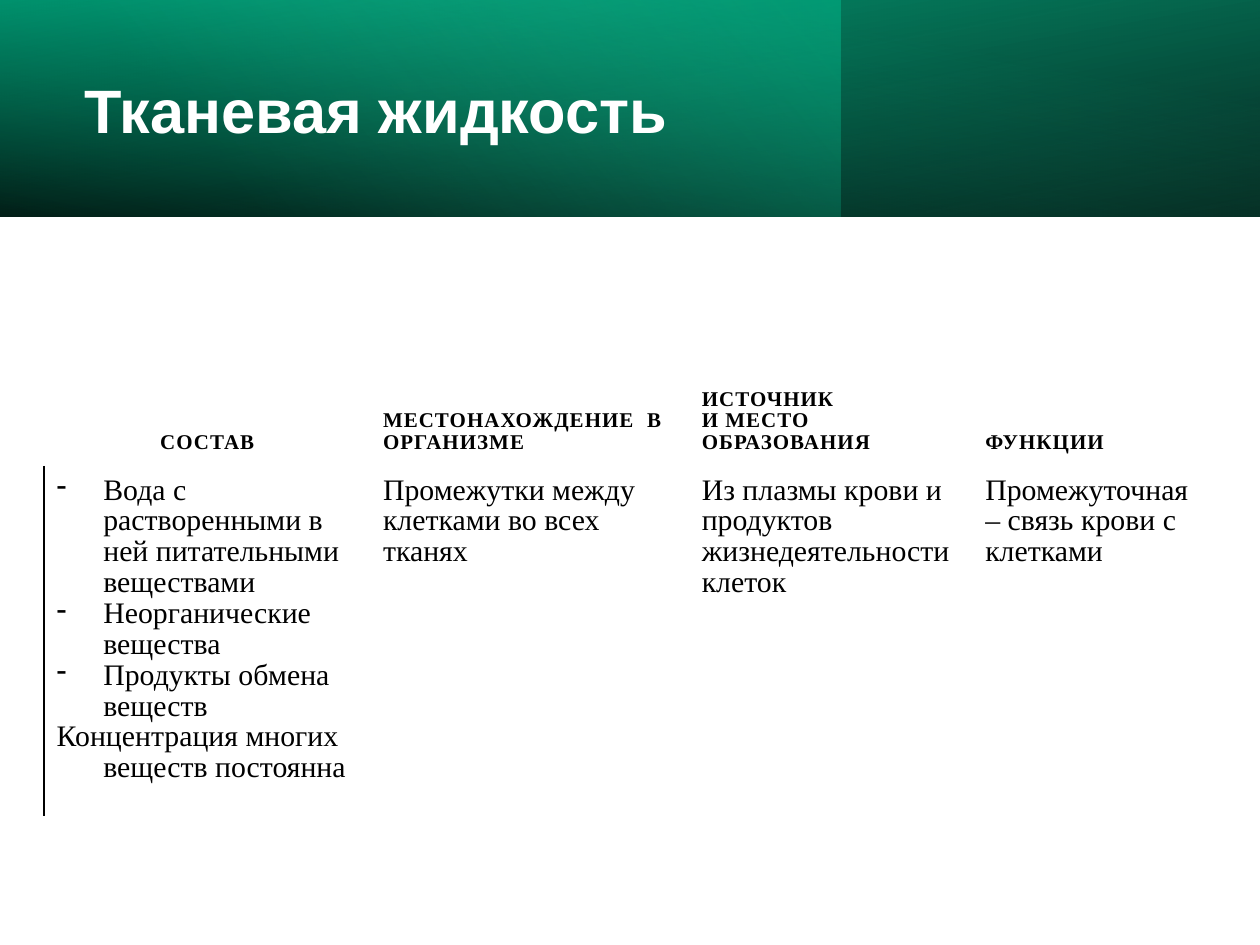
import lxml.etree
import pptx
import pptx.dml.color
import pptx.enum.shapes
import pptx.enum.text
import pptx.oxml
import pptx.oxml.ns
import pptx.util

Pt = pptx.util.Pt
RGBColor = pptx.dml.color.RGBColor
ALIGN = pptx.enum.text.PP_ALIGN
ANCHOR = pptx.enum.text.MSO_ANCHOR
qn = pptx.oxml.ns.qn

BLACK = RGBColor(0x00, 0x00, 0x00)
WHITE = RGBColor(0xFF, 0xFF, 0xFF)
PINE = RGBColor(0x00, 0x99, 0x73)
GREEN = RGBColor(0x00, 0xCC, 0x99)
MINT = RGBColor(0x47, 0xFF, 0xD1)

PAGE_WIDTH, PAGE_HEIGHT = 720, 540
BANNER_HEIGHT = 123.84
HANGING = 26.64

HEADERS = [
    ["СОСТАВ"],
    ["МЕСТОНАХОЖДЕНИЕ  В ОРГАНИЗМЕ"],
    ["ИСТОЧНИК", "И МЕСТО ОБРАЗОВАНИЯ"],
    ["ФУНКЦИИ"],
]
COMPOSITION = [
    "Вода с растворенными в ней питательными веществами",
    "Неорганические вещества",
    "Продукты обмена веществ",
    "Концентрация многих веществ постоянна",
]
DETAILS = [
    "Промежутки между клетками во всех тканях",
    "Из плазмы крови и продуктов жизнедеятельности клеток",
    "Промежуточная – связь крови с клетками",
]


def write(frame, text, font="Times New Roman", size=17, color=BLACK, bold=False,
          align=ALIGN.LEFT, line=0.93, after=0, tracking=0, hanging=0, bullet=None):
    last = frame.paragraphs[-1]
    para = frame.add_paragraph() if last.runs else last
    para.alignment = align
    para.line_spacing = line
    para.space_before = Pt(0)
    para.space_after = Pt(after)
    span = para.add_run()
    span.text = text
    span.font.name = font
    span.font.size = Pt(size)
    span.font.bold = bold
    span.font.color.rgb = color
    if tracking:
        span.font._element.set("spc", str(round(tracking * 100)))
    properties = para._p.get_or_add_pPr()
    properties.set("marL", str(Pt(hanging)))
    properties.set("indent", str(-Pt(hanging)))
    if bullet:
        lxml.etree.SubElement(properties, qn("a:buChar")).set("char", bullet)
    else:
        lxml.etree.SubElement(properties, qn("a:buNone"))


class SlideBuilder:
    title_font = "Arial"

    def __init__(self, deck):
        self.page = deck.slides.add_slide(deck.slide_layouts[5])

    def gradient_band(self, width, angle, stops, rotation=0, flip=False):
        box = self.page.shapes.add_shape(
            pptx.enum.shapes.MSO_SHAPE.RECTANGLE, 0, 0, Pt(width), Pt(BANNER_HEIGHT))
        box.shadow.inherit = False
        box.line.fill.background()
        box.rotation = rotation
        if flip:
            box._element.spPr.find(qn("a:xfrm")).set("flipH", "1")
        box.fill.gradient()
        gradient = box._element.spPr.find(qn("a:gradFill"))
        gradient.set("rotWithShape", "1")
        gradient.find(qn("a:lin")).set("ang", str(angle * 60000))
        stop_list = gradient.find(qn("a:gsLst"))
        for stop in list(stop_list):
            stop_list.remove(stop)
        for position, color, opacity in stops:
            stop = lxml.etree.SubElement(stop_list, qn("a:gs"))
            stop.set("pos", str(position * 1000))
            shade = lxml.etree.SubElement(stop, qn("a:srgbClr"))
            shade.set("val", str(color))
            lxml.etree.SubElement(shade, qn("a:alpha")).set("val", str(opacity * 1000))

    def title(self, text, left, top, width, height):
        box = self.page.shapes.title
        box.left, box.top, box.width, box.height = map(Pt, (left, top, width, height))
        tree = box._element.getparent()
        tree.append(box._element)
        frame = box.text_frame
        frame.word_wrap = True
        frame.auto_size = pptx.enum.text.MSO_AUTO_SIZE.NONE
        frame.vertical_anchor = ANCHOR.MIDDLE
        write(frame, text, font=self.title_font, size=35, color=WHITE, bold=True,
              line=0.9, after=6)

    def table(self, left, top, widths, heights):
        grid = self.page.shapes.add_table(
            len(heights), len(widths), Pt(left), Pt(top),
            Pt(sum(widths)), Pt(sum(heights))).table
        grid.first_row = grid.horz_banding = False
        for column, width in zip(grid.columns, widths):
            column.width = Pt(width)
        for row, height in zip(grid.rows, heights):
            row.height = Pt(height)
        return grid

    def cell(self, cell, anchor, top_margin):
        cell.fill.background()
        cell.vertical_anchor = anchor
        cell.margin_left = cell.margin_right = cell.margin_bottom = Pt(7.2)
        cell.margin_top = Pt(top_margin)
        return cell.text_frame

    def left_border(self, cell, color, width):
        line = lxml.etree.Element(qn("a:lnL"))
        line.set("w", str(Pt(width)))
        fill = lxml.etree.SubElement(line, qn("a:solidFill"))
        lxml.etree.SubElement(fill, qn("a:srgbClr")).set("val", str(color))
        cell._tc.get_or_add_tcPr().insert(0, line)


def main():
    deck = pptx.Presentation()
    deck.slide_width, deck.slide_height = Pt(PAGE_WIDTH), Pt(PAGE_HEIGHT)
    builder = SlideBuilder(deck)
    builder.gradient_band(PAGE_WIDTH, 100, [(0, BLACK, 96), (100, PINE, 100)],
                          rotation=180, flip=True)
    builder.gradient_band(480.24, 140, [(0, GREEN, 41), (74, MINT, 0)])
    builder.gradient_band(PAGE_WIDTH, 260, [(0, BLACK, 63), (78, GREEN, 15)], flip=True)
    builder.title("Тканевая жидкость", 41.04, 19.44, 416.88, 91.44)

    grid = builder.table(25.2, 193.9, [186.48, 182.16, 162, 138.24], [72.72, 199.44])
    for index, lines in enumerate(HEADERS):
        frame = builder.cell(grid.cell(0, index), ANCHOR.BOTTOM, 7.2)
        for text in lines:
            write(frame, text, size=12, bold=True, tracking=0.6,
                  align=ALIGN.LEFT if index else ALIGN.CENTER)
    for index, lines in enumerate([COMPOSITION] + [[text] for text in DETAILS]):
        frame = builder.cell(grid.cell(1, index), ANCHOR.TOP, 5.04)
        for text in lines:
            listed = index == 0 and text != COMPOSITION[-1]
            write(frame, text, hanging=0 if index else HANGING,
                  bullet="-" if listed else None)
    builder.left_border(grid.cell(1, 0), BLACK, 1)
    deck.save("out.pptx")


if __name__ == "__main__":
    main()
